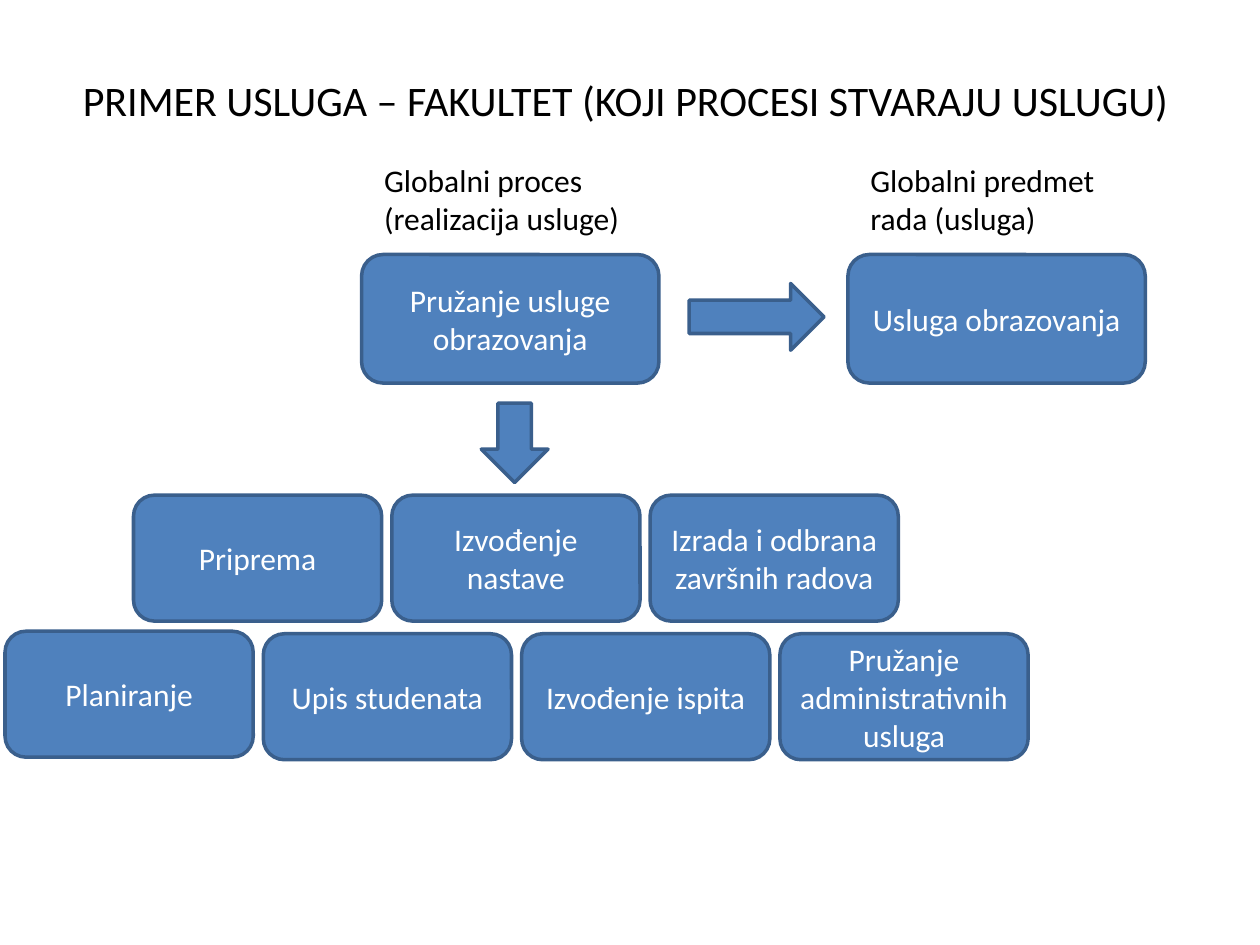
from dataclasses import dataclass

from pptx import Presentation
from pptx.dml.color import RGBColor
from pptx.enum.shapes import MSO_SHAPE
from pptx.enum.text import MSO_ANCHOR, PP_ALIGN
from pptx.util import Inches, Pt


@dataclass(frozen=True)
class Theme:
    font: str = "Calibri"
    fill: RGBColor = RGBColor(0x4F, 0x81, 0xBD)
    line: RGBColor = RGBColor(0x3A, 0x5F, 0x8C)
    dark: RGBColor = RGBColor(0, 0, 0)
    light: RGBColor = RGBColor(0xFF, 0xFF, 0xFF)
    title: Pt = Pt(24)
    body: Pt = Pt(18)
    border: Pt = Pt(2)


theme = Theme()

prs = Presentation()
prs.slide_width, prs.slide_height = Inches(10), Inches(7.5)
s = prs.slides.add_slide(prs.slide_layouts[6])


def write(sp, text, color, size=theme.body, align=PP_ALIGN.CENTER, anchor=MSO_ANCHOR.MIDDLE):
    tf = sp.text_frame
    tf.word_wrap = True
    tf.vertical_anchor = anchor
    tf.text = text
    p = tf.paragraphs[0]
    p.alignment = align
    font = p.runs[0].font
    font.name, font.size, font.color.rgb = theme.font, size, color
    return p


def add_block(kind, x, y, w, h):
    sp = s.shapes.add_shape(kind, Inches(x), Inches(y), Inches(w), Inches(h))
    sp.shadow.inherit = False
    sp.fill.solid()
    sp.fill.fore_color.rgb = theme.fill
    sp.line.color.rgb = theme.line
    sp.line.width = theme.border
    return sp


# Title
title = s.shapes.add_textbox(Inches(0.12), Inches(0.5), Inches(9.69), Inches(0.65))
p = write(title, "PRIMER USLUGA – FAKULTET (KOJI PROCESI STVARAJU USLUGU)", theme.dark, theme.title)
p.line_spacing = 0.8

# Global process and its result, each with a caption above
global_blocks = [
    (2.87, "Globalni proces (realizacija usluge)", "Pružanje usluge obrazovanja"),
    (6.73, "Globalni predmet rada (usluga)", "Usluga obrazovanja"),
]
for x, caption, text in global_blocks:
    label = s.shapes.add_textbox(Inches(x + 0.08), Inches(1.23), Inches(2.2), Inches(0.71))
    write(label, caption, theme.dark, align=PP_ALIGN.LEFT, anchor=MSO_ANCHOR.TOP)
    write(add_block(MSO_SHAPE.ROUNDED_RECTANGLE, x, 2.02, 2.36, 1.02), text, theme.light)

add_block(MSO_SHAPE.RIGHT_ARROW, 5.47, 2.25, 1.07, 0.53)
add_block(MSO_SHAPE.DOWN_ARROW, 3.82, 3.2, 0.53, 0.63)

# Subprocesses in two staggered rows; the first of the lower row sits slightly higher
step = 2.05
subprocess_rows = [
    (1.06, 3.93, ["Priprema", "Izvođenje nastave", "Izrada i odbrana završnih radova"]),
    (0.04, 5.01, ["Planiranje"]),
    (0.04 + step, 5.03, ["Upis studenata", "Izvođenje ispita", "Pružanje administrativnih usluga"]),
]
for left, top, names in subprocess_rows:
    for i, name in enumerate(names):
        sp = add_block(MSO_SHAPE.ROUNDED_RECTANGLE, left + i * step, top, 1.97, 1)
        write(sp, name, theme.light)

prs.save("out.pptx")
